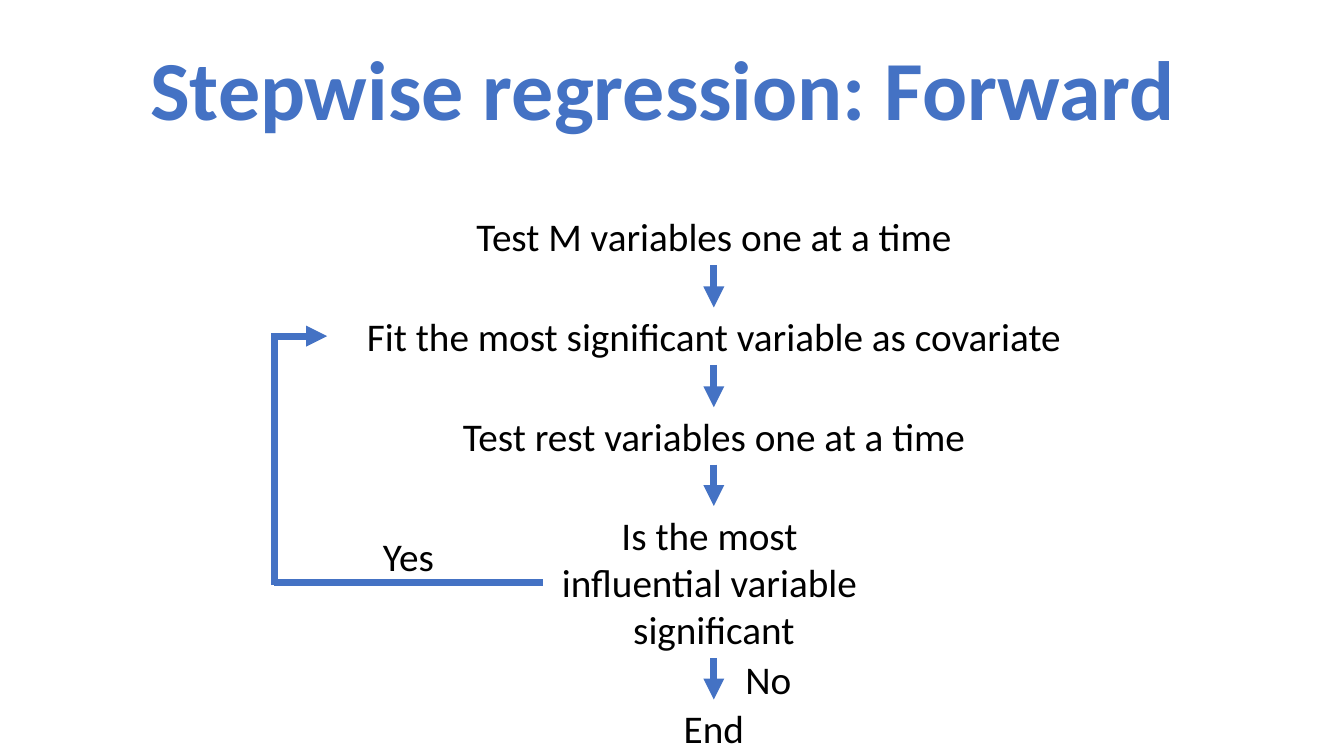
from lxml.etree import SubElement
from pptx import Presentation
from pptx.dml.color import RGBColor
from pptx.enum.shapes import MSO_CONNECTOR
from pptx.enum.text import MSO_ANCHOR, MSO_AUTO_SIZE, PP_ALIGN
from pptx.oxml.ns import qn
from pptx.util import Emu, Pt

BLUE = RGBColor(0x44, 0x72, 0xC4)
BLACK = RGBColor(0, 0, 0)
FONT = "Calibri"
EMU_PER_PX = 9144

TITLE = "Stepwise regression: Forward "
STEPS = [
    (["Test M variables one at a time"], 206, 517, 57),
    (["Fit the most significant variable as covariate"], 305, 767, 57),
    (["Test rest variables one at a time"], 404, 558, 57),
    (["Is the most ", "influential variable ", "significant"], 502, 339, 151),
    (["End"], 694, 126, 57),
]
ANSWERS = [("Yes", 342, 523), ("No", 699, 645)]
ANSWER_SIZE = (126, 57)
SPINE_X = 708
LOOP_X = 272
LOOP_OVERLAP = 3
REPEATED_STEP, DECISION_STEP = 1, 3


def px(length):
    return Emu(round(length * EMU_PER_PX))


def place(shape, left, top, width, height):
    shape.left, shape.top = px(left), px(top)
    shape.width, shape.height = px(width), px(height)


def add_line(paragraph, text, size, color, bold=False):
    paragraph.alignment = PP_ALIGN.CENTER
    run = paragraph.add_run()
    run.text = text
    run.font.name = FONT
    run.font.size = Pt(size)
    run.font.bold = bold
    run.font.color.rgb = color


def add_label(slide, lines, left, top, width, height):
    shape = slide.shapes.add_textbox(px(left), px(top), px(width), px(height))
    frame = shape.text_frame
    frame.word_wrap = True
    frame.auto_size = MSO_AUTO_SIZE.SHAPE_TO_FIT_TEXT
    for index, text in enumerate(lines):
        paragraph = frame.add_paragraph() if index else frame.paragraphs[0]
        add_line(paragraph, text, 28, BLACK)


def add_connection(slide, start, end, arrow=True):
    connector = slide.shapes.add_connector(
        MSO_CONNECTOR.STRAIGHT, *map(px, start + end))
    connector.line.color.rgb = BLUE
    connector.line.width = Pt(5)
    if arrow:
        SubElement(connector.line._get_or_add_ln(), qn("a:tailEnd"), type="triangle")
    SubElement(connector._element.spPr, qn("a:effectLst"))


def main():
    presentation = Presentation()
    presentation.slide_width, presentation.slide_height = px(1333), px(750)
    slide = presentation.slides.add_slide(presentation.slide_layouts[5])

    title = slide.shapes.title
    place(title, 92, 0, 1150, 185)
    title.text_frame.vertical_anchor = MSO_ANCHOR.MIDDLE
    title.text_frame.paragraphs[0].line_spacing = 0.9
    add_line(title.text_frame.paragraphs[0], TITLE, 60, BLUE, bold=True)

    for lines, top, width, height in STEPS:
        add_label(slide, lines, SPINE_X - width / 2, top, width, height)
    for text, left, top in ANSWERS:
        add_label(slide, [text], left, top, *ANSWER_SIZE)

    for (_, top, _, height), (_, next_top, _, _) in zip(STEPS, STEPS[1:]):
        add_connection(slide, (SPINE_X, top + height), (SPINE_X, next_top))

    (entry_x, entry_y), (exit_x, exit_y) = [
        (SPINE_X - width / 2, top + height / 2)
        for _, top, width, height in (STEPS[REPEATED_STEP], STEPS[DECISION_STEP])
    ]
    add_connection(slide, (LOOP_X, entry_y), (entry_x, entry_y))
    add_connection(slide, (LOOP_X, exit_y + LOOP_OVERLAP),
                   (LOOP_X, entry_y - LOOP_OVERLAP), arrow=False)
    add_connection(slide, (LOOP_X, exit_y), (exit_x, exit_y), arrow=False)

    presentation.save("out.pptx")


if __name__ == "__main__":
    main()
